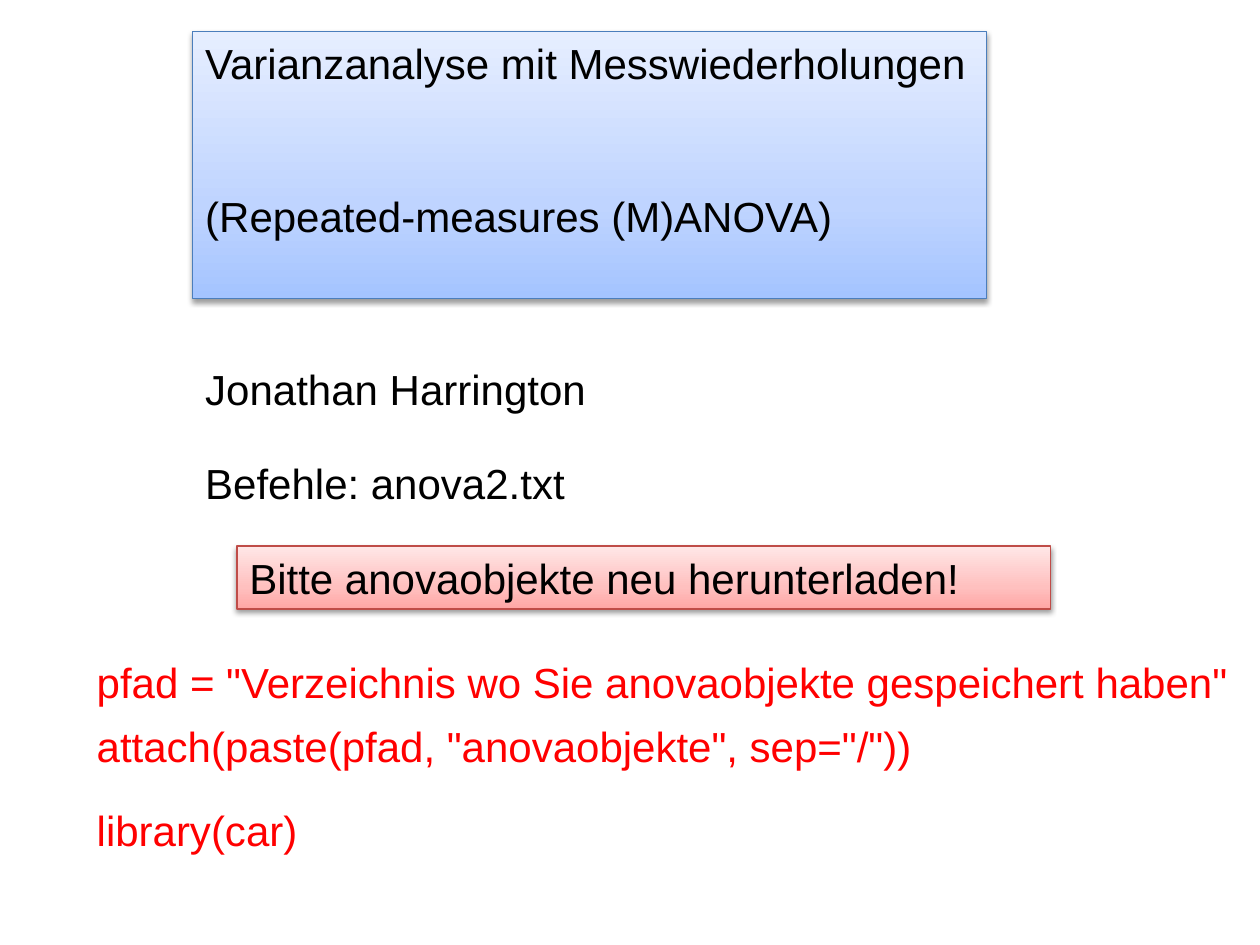
from lxml.etree import SubElement
from pptx import Presentation
from pptx.dml.color import RGBColor as RGB
from pptx.enum.shapes import MSO_SHAPE as Shape
from pptx.enum.text import MSO_ANCHOR as Anchor, PP_ALIGN as Align
from pptx.oxml.ns import qn
from pptx.util import Pt

THEME = {
    "font": "Arial",
    "size": 24,
    "text": "000000",
    "code": "FF0000",
    "blue": {"stops": [(0, "A4C4FF"), (35, "BFD4FF"), (100, "E6EEFF")], "line": "4B7EBC"},
    "red": {"stops": [(0, "FFA6A5"), (35, "FFC0BF"), (100, "FFE7E7")], "line": "BF4C48"},
}
LINE_HEIGHT = 36
TITLE_GAP = 58.7
TITLE_LEFT, CODE_LEFT = 110.2, 48.2

# lines, (left, top, width, height), panel colours
PANELS = [
    (["Varianzanalyse mit Messwiederholungen", "(Repeated-measures (M)ANOVA)"],
     (TITLE_LEFT, 18, 453.6, 152.6), "blue"),
    (["Bitte anovaobjekte neu herunterladen!"],
     (135.4, 312, 465, LINE_HEIGHT), "red"),
]
# line, left, top, width, colour, wrap
NOTES = [
    ("Jonathan Harrington", TITLE_LEFT, 204, 252, "text", True),
    ("Befehle: anova2.txt", TITLE_LEFT, 258, 318, "text", True),
    ('pfad = "Verzeichnis wo Sie anovaobjekte gespeichert haben"',
     CODE_LEFT, 371.5, 667, "code", False),
    ('attach(paste(pfad, "anovaobjekte", sep="/"))', CODE_LEFT, 408.2, 552, "code", True),
    ("library(car)", CODE_LEFT, 456, 180, "code", True),
]


def write(frame, lines, colour, wrap=True):
    frame.word_wrap = wrap
    frame.vertical_anchor = Anchor.TOP
    for index, line in enumerate(lines):
        paragraph = frame.add_paragraph() if index else frame.paragraphs[0]
        paragraph.alignment = Align.LEFT
        if index:
            paragraph.space_before = Pt(TITLE_GAP)
        run = paragraph.add_run()
        run.text = line
        run.font.name = THEME["font"]
        run.font.size = Pt(THEME["size"])
        run.font.color.rgb = RGB.from_string(THEME[colour])


def add_colour(parent, colour):
    return SubElement(parent, qn("a:srgbClr"), val=colour)


def paint(panel, colours):
    """Fill upwards through the stops, then add outline and soft shadow."""
    panel.fill.gradient()
    panel.fill.gradient_angle = 90
    properties = panel.element.spPr
    stop_list = properties.find(qn("a:gradFill")).find(qn("a:gsLst"))
    for stop in list(stop_list):
        stop_list.remove(stop)
    for position, colour in colours["stops"]:
        add_colour(SubElement(stop_list, qn("a:gs"), pos=str(position * 1000)), colour)
    panel.line.color.rgb = RGB.from_string(colours["line"])
    panel.line.width = Pt(0.75)
    panel.shadow.inherit = False
    shadow = SubElement(properties.find(qn("a:effectLst")), qn("a:outerShdw"),
                        blurRad=str(Pt(3.1)), dist=str(Pt(1.6)),
                        dir="5400000", rotWithShape="0")
    SubElement(add_colour(shadow, "000000"), qn("a:alpha"), val="38000")


def main():
    deck = Presentation()
    deck.slide_width, deck.slide_height = Pt(720), Pt(540)
    shapes = deck.slides.add_slide(deck.slide_layouts[6]).shapes
    for lines, place, colours in PANELS:
        panel = shapes.add_shape(Shape.RECTANGLE, *map(Pt, place))
        paint(panel, THEME[colours])
        write(panel.text_frame, lines, "text")
    for line, left, top, width, colour, wrap in NOTES:
        note = shapes.add_textbox(Pt(left), Pt(top), Pt(width), Pt(LINE_HEIGHT))
        write(note.text_frame, [line], colour, wrap)
    deck.save("out.pptx")


if __name__ == "__main__":
    main()
